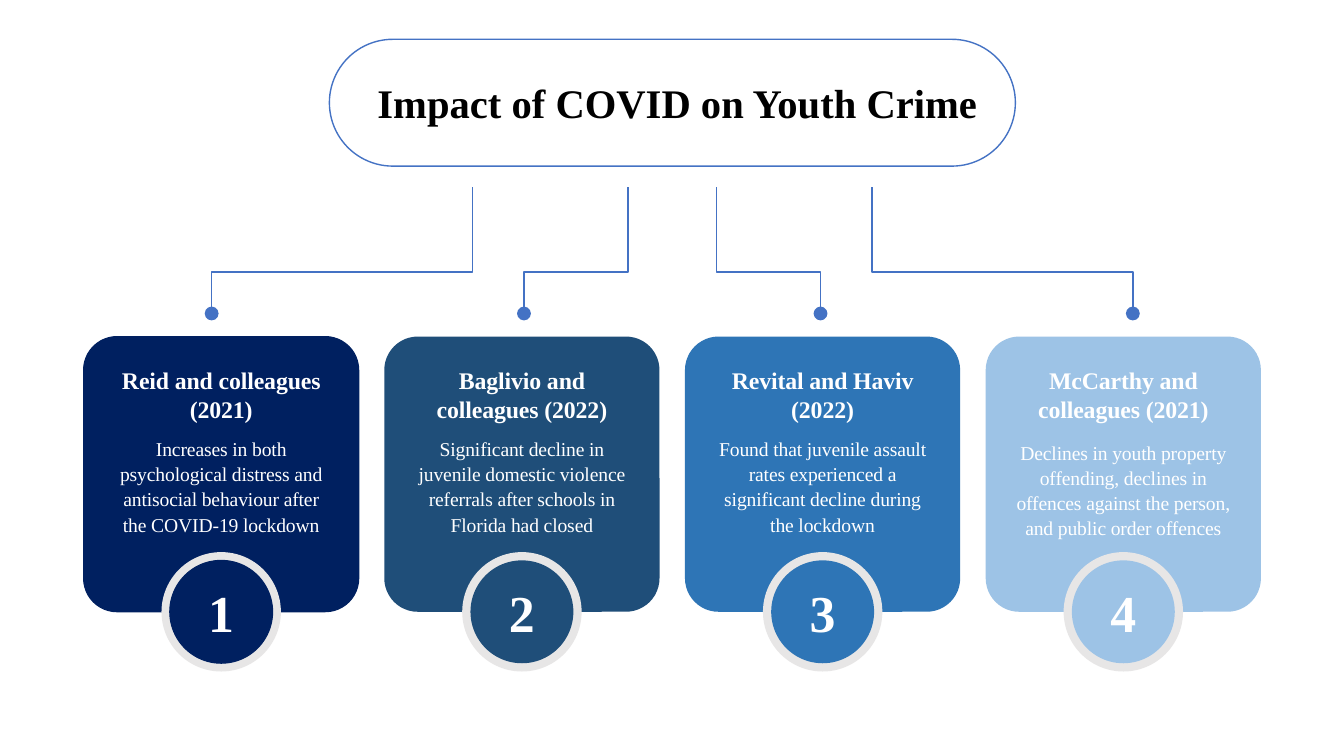
from collections import namedtuple

from lxml.etree import SubElement
from pptx import Presentation
from pptx.dml.color import RGBColor
from pptx.enum.shapes import MSO_SHAPE as Preset
from pptx.enum.text import MSO_ANCHOR as Anchor, MSO_AUTO_SIZE as AutoSize, PP_ALIGN as Align
from pptx.oxml.ns import qn
from pptx.util import Pt

FONT = "Times New Roman"
BLACK = RGBColor(0x00, 0x00, 0x00)
WHITE = RGBColor(0xFF, 0xFF, 0xFF)
BLUE = RGBColor(0x44, 0x72, 0xC4)
RING_GREY = RGBColor(0xE7, 0xE6, 0xE6)
NAVY = RGBColor(0x00, 0x20, 0x60)
DEEP_BLUE = RGBColor(0x1F, 0x4E, 0x79)
MID_BLUE = RGBColor(0x2E, 0x75, 0xB6)
PALE_BLUE = RGBColor(0x9D, 0xC3, 0xE6)

Box = namedtuple("Box", "left top width height")
Study = namedtuple("Study", "heading finding color outlined finding_top")

STUDIES = [
    Study("Reid and colleagues (2021)",
          "Increases in both psychological distress and antisocial behaviour "
          "after the COVID-19 lockdown", NAVY, True, 67),
    Study("Baglivio and colleagues (2022)",
          "Significant decline in juvenile domestic violence referrals after "
          "schools in Florida had closed", DEEP_BLUE, False, 67),
    Study("Revital and Haviv (2022)",
          "Found that juvenile assault rates experienced a significant decline "
          "during the lockdown", MID_BLUE, False, 67),
    Study("McCarthy and colleagues (2021)",
          "Declines in youth property offending, declines in offences against "
          "the person, and public order offences", PALE_BLUE, False, 69.5),
]
CARD_SIZE = 196.6
CARD_PITCH = 214.8
BRANCH_SPANS = [(-142.6, -329), (-31.7, -105.9), (31.7, 105.9), (142.6, 329)]


def write(frame, text, size, color, bold, anchor, spacing=0, inset=5):
    """Fill a text frame with one centred paragraph."""
    frame.auto_size = AutoSize.NONE
    frame.word_wrap = True
    frame.vertical_anchor = anchor
    frame.margin_left = frame.margin_right = Pt(inset)
    frame.margin_top = frame.margin_bottom = Pt(min(inset, 3.6))
    frame.text = text
    paragraph = frame.paragraphs[0]
    paragraph.alignment = Align.CENTER
    run = paragraph.runs[0]
    run.font.name = FONT
    run.font.size = Pt(size)
    run.font.bold = bold
    run.font.color.rgb = color
    if spacing:
        run._r.get_or_add_rPr().set("spc", str(round(spacing * 100)))
    return paragraph


def add_preset(slide, preset, box, fill=None, line=None, line_width=0.75):
    """Add a flat preset shape in the given box."""
    shape = slide.shapes.add_shape(preset, *map(Pt, box))
    shape.shadow.inherit = False
    if fill is None:
        shape.fill.background()
    else:
        shape.fill.solid()
        shape.fill.fore_color.rgb = fill
    if line is None:
        shape.line.fill.background()
    else:
        shape.line.color.rgb = line
        shape.line.width = Pt(line_width)
    return shape


def add_header(slide, box):
    """Place the title inside its outlined pill."""
    pill = add_preset(slide, Preset.ROUNDED_RECTANGLE, box, line=BLUE, line_width=1)
    pill.adjustments[0] = 0.5
    title = slide.shapes.title
    title.left, title.top = Pt(box.left + 23.7), Pt(box.top + 23.7)
    title.width, title.height = Pt(450), Pt(42.5)
    write(title.text_frame, "Impact of COVID on Youth Crime", 29, BLACK, True, Anchor.BOTTOM)


def add_branches(slide, box):
    """Draw the stepped lines that fan out symmetrically to the cards."""
    center = box.left + box.width / 2
    bend, bottom = box.top + 60.5, box.top + box.height
    for start, end in BRANCH_SPANS:
        start_x, end_x = Pt(center + start), Pt(center + end)
        outline = slide.shapes.build_freeform(start_x, Pt(box.top))
        outline.add_line_segments(
            [(start_x, Pt(bend)), (end_x, Pt(bend)), (end_x, Pt(bottom))], close=False)
        branch = outline.convert_to_shape()
        branch.shadow.inherit = False
        branch.fill.background()
        branch.line.color.rgb = BLUE
        branch.line.width = Pt(1)
        SubElement(branch.line._get_or_add_ln(), qn("a:tailEnd"), type="oval", w="lg", len="lg")


def add_card(slide, box, number, study):
    """Place one study card with its heading, finding and number badge."""
    outline = study.color if study.outlined else None
    panel = add_preset(slide, Preset.ROUNDED_RECTANGLE, box, study.color, outline)
    panel.adjustments[0] = 0.122

    text_left, text_width = box.left + 14.4, box.width - 28.8
    heading = slide.shapes.add_textbox(
        *map(Pt, (text_left, box.top + 17.3, text_width, 48.2)))
    write(heading.text_frame, study.heading, 17, WHITE, True, Anchor.BOTTOM, -0.1)
    finding = slide.shapes.add_textbox(
        *map(Pt, (text_left, box.top + study.finding_top, text_width, 79.5)))
    paragraph = write(finding.text_frame, study.finding, 14, WHITE, False, Anchor.TOP, -0.1)
    paragraph.line_spacing = Pt(18)

    center_x, center_y = box.left + box.width / 2, box.top + box.height
    ring, disc = (Box(center_x - size / 2, center_y - size / 2, size, size)
                  for size in (85.3, 73.5))
    add_preset(slide, Preset.OVAL, ring, RING_GREY)
    badge = add_preset(slide, Preset.OVAL, disc, study.color, outline)
    write(badge.text_frame, str(number), 37, WHITE, True, Anchor.MIDDLE, -1.4, 0)


def main():
    """Build and save the slide."""
    deck = Presentation()
    deck.slide_width, deck.slide_height = Pt(960), Pt(540)
    slide = deck.slides.add_slide(deck.slide_layouts[5])
    add_header(slide, Box(235.3, 28.1, 490, 90.6))
    for index, study in enumerate(STUDIES):
        box = Box(59.7 + index * CARD_PITCH, 240.4, CARD_SIZE, CARD_SIZE)
        add_card(slide, box, index + 1, study)
    add_branches(slide, Box(151.2, 133.9, 658, 90))
    deck.save("out.pptx")


if __name__ == "__main__":
    main()
